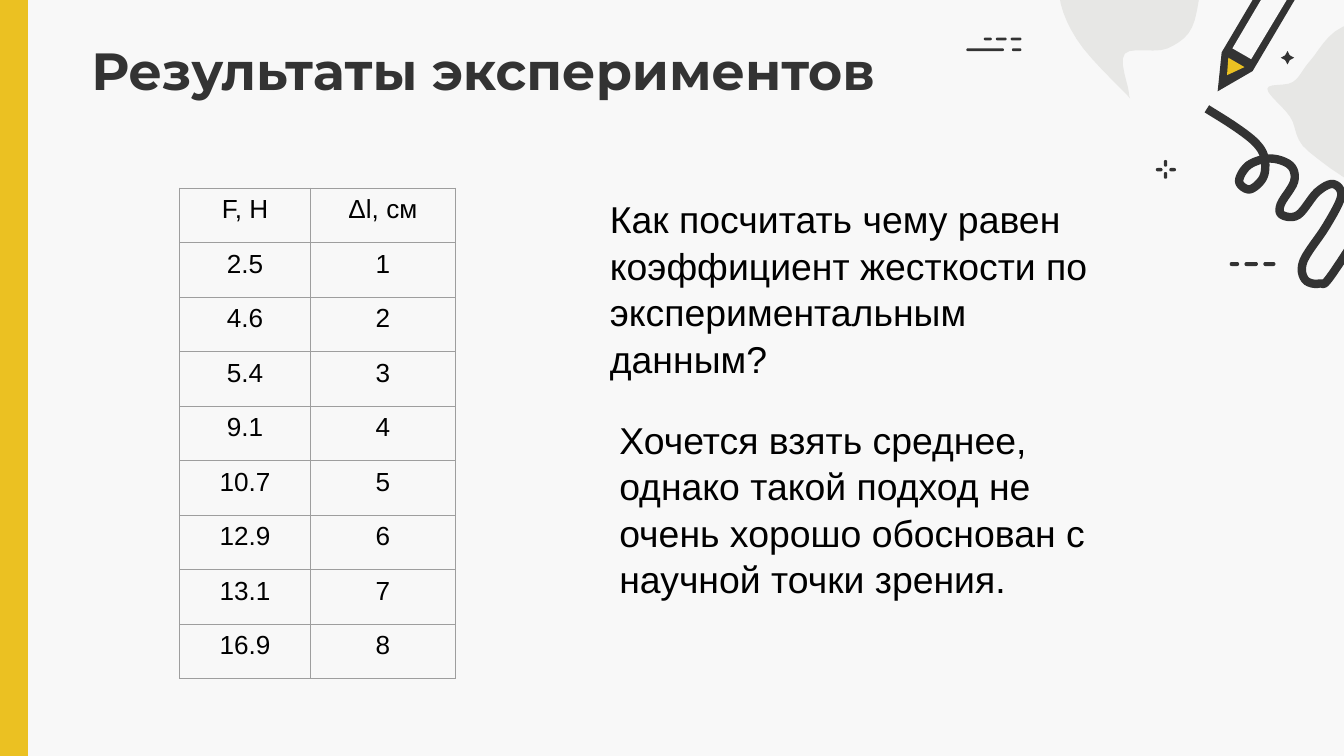
from dataclasses import dataclass

from lxml.etree import SubElement
from pptx import Presentation
from pptx.dml.color import RGBColor
from pptx.enum.shapes import MSO_SHAPE
from pptx.enum.text import MSO_ANCHOR, MSO_AUTO_SIZE, PP_ALIGN
from pptx.oxml import parse_xml
from pptx.oxml.ns import nsdecls, qn
from pptx.util import Pt

PAPER = RGBColor(0xF8, 0xF8, 0xF8)
YELLOW = RGBColor(0xEB, 0xC1, 0x22)
GREY = RGBColor(0xE7, 0xE7, 0xE5)
DARK = RGBColor(0x33, 0x33, 0x33)
BLACK = RGBColor(0, 0, 0)
BORDER = RGBColor(0x9E, 0x9E, 0x9E)
GRID = 0.72
CURVE_STEPS = 6


@dataclass
class Outline:
    color: RGBColor
    points: list


@dataclass
class DashRow:
    y: float
    h: float
    spans: list


@dataclass
class Note:
    x: float
    y: float
    text: str


BLOBS = [
    Outline(GREY, [(943, 66), (962, 61), (975, 45), (999, 20), (1050, 10),
                   (1091, 45), (1090, 105), (1030, 142), (974, 113), (960, 87)]),
    Outline(GREY, [(788, -10), (801, 29), (837, 69), (840, 69), (837, 40),
                   (869, 36), (889, 15), (889, -37), (840, -57), (804, -49)]),
]
PENCIL = [
    Outline(DARK, [(974, -18), (951, -32), (909, 39), (906, 68), (932, 53)]),
    Outline(PAPER, [(967, -16), (953, -25), (917, 36), (931, 44)]),
    Outline(YELLOW, [(914, 43), (926, 50), (913, 56)]),
]
SQUIGGLE = Outline(DARK, [
    (898, 81), (920, 95), (935, 107), (941, 118), (940, 132), (930, 141), (922, 135),
    (929, 123), (945, 118), (960, 123), (963, 135), (953, 152), (954, 160), (966, 160),
    (980, 143), (992, 137), (998, 146), (987, 168), (970, 194), (971, 208), (982, 211),
    (992, 203), (1035, 136)])
DASH_ROWS = [
    DashRow(28, 2, [(732, 6), (741, 8), (752, 8)]),
    DashRow(36, 2, [(719, 28), (753, 7)]),
    DashRow(195, 3, [(915, 7), (926, 10), (940, 9)]),
    DashRow(125, 2.5, [(860, 5), (870, 5)]),
    DashRow(119, 5, [(866, 2.5)]),
    DashRow(128, 5, [(866, 2.5)]),
]
READINGS = [("F, Н", "Δl, см"), ("2.5", "1"), ("4.6", "2"), ("5.4", "3"), ("9.1", "4"),
            ("10.7", "5"), ("12.9", "6"), ("13.1", "7"), ("16.9", "8")]
NOTES = [
    Note(319.7, 100.8, "Как посчитать чему равен коэффициент жесткости по экспериментальным данным?"),
    Note(324.7, 218.9, "Хочется взять среднее, однако такой подход не очень хорошо обоснован с научной точки зрения."),
]


def smooth(points: list, closed: bool) -> list:
    ring = [points[-1], *points, *points[:2]] if closed else [points[0], *points, points[-1]]
    curve = []
    for a, b, c, d in zip(ring, ring[1:], ring[2:], ring[3:]):
        for i in range(CURVE_STEPS):
            t = i / CURVE_STEPS
            curve.append(tuple(
                q + t * (r - p + t * (2 * p - 5 * q + 4 * r - w + t * (3 * q - p - 3 * r + w))) / 2
                for p, q, r, w in zip(a, b, c, d)))
    return curve if closed else [*curve, points[-1]]


def paint(sp, color: RGBColor) -> None:
    sp.shadow.inherit = False
    sp.fill.solid()
    sp.fill.fore_color.rgb = color
    sp.line.fill.background()


def build_outline(s, points: list, closed: bool = True):
    first, *others = [(Pt(x * GRID), Pt(y * GRID)) for x, y in points]
    builder = s.shapes.build_freeform(*first)
    builder.add_line_segments(others, close=closed)
    return builder.convert_to_shape()


def draw_squiggle(s) -> None:
    sp = build_outline(s, smooth(SQUIGGLE.points, False), False)
    sp.shadow.inherit = False
    sp.fill.background()
    sp.line.color.rgb = SQUIGGLE.color
    sp.line.width = Pt(4.5)


def draw_mark(s, kind: MSO_SHAPE, x: float, y: float, w: float, h: float, adjust: float) -> None:
    sp = s.shapes.add_shape(kind, *[Pt(v * GRID) for v in (x, y, w, h)])
    sp.adjustments[0] = adjust
    paint(sp, DARK)


def set_font(p, name: str, size: float, color: RGBColor, bold: bool = False) -> None:
    p.font.name, p.font.size, p.font.bold = name, Pt(size), bold
    p.font.color.rgb = color


def draw_title(s) -> None:
    sp = s.shapes.title
    sp.left, sp.top, sp.width, sp.height = Pt(41.8), Pt(13), Pt(534.2), Pt(43.9)
    tf = sp.text_frame
    tf.text = "Результаты экспериментов"
    tf.auto_size = MSO_AUTO_SIZE.NONE
    tf.vertical_anchor = MSO_ANCHOR.TOP
    tf.margin_left = tf.margin_right = tf.margin_top = tf.margin_bottom = Pt(7.2)
    p = tf.paragraphs[0]
    p.alignment = PP_ALIGN.LEFT
    set_font(p, "Montserrat", 28, DARK, True)


def draw_borders(cell) -> None:
    tc_pr = cell._tc.get_or_add_tcPr()
    for i, side in enumerate(("lnL", "lnR", "lnT", "lnB")):
        ln = parse_xml(f'<a:{side} {nsdecls("a")} w="{Pt(0.75)}"/>')
        fill = SubElement(ln, qn("a:solidFill"))
        SubElement(fill, qn("a:srgbClr"), val=str(BORDER))
        tc_pr.insert(i, ln)


def draw_readings(s) -> None:
    frame = s.shapes.add_table(len(READINGS), 2, Pt(96.3), Pt(100.8), Pt(147.8), Pt(262.8))
    table = frame.table
    table.first_row = table.horz_banding = False
    table.columns[0].width, table.columns[1].width = Pt(70), Pt(77.8)
    for row, values in zip(table.rows, READINGS):
        for cell, value in zip(row.cells, values):
            cell.text = value
            cell.fill.background()
            p = cell.text_frame.paragraphs[0]
            p.alignment = PP_ALIGN.CENTER
            set_font(p, "Arial", 14, BLACK)
            draw_borders(cell)


def draw_note(s, note: Note) -> None:
    tf = s.shapes.add_textbox(Pt(note.x), Pt(note.y), Pt(290.9), Pt(104.4)).text_frame
    tf.word_wrap = True
    tf.text = note.text
    p = tf.paragraphs[0]
    p.line_spacing = 1.04
    set_font(p, "Arial", 20, BLACK)


def main() -> None:
    prs = Presentation()
    prs.slide_width, prs.slide_height = Pt(720), Pt(405)
    s = prs.slides.add_slide(prs.slide_layouts[5])
    s.background.fill.solid()
    s.background.fill.fore_color.rgb = PAPER
    bar = s.shapes.add_shape(MSO_SHAPE.RECTANGLE, Pt(-0.7), 0, Pt(15.1), Pt(405))
    paint(bar, YELLOW)
    bar.line.color.rgb = YELLOW
    bar.line.width = Pt(0.75)
    for blob in BLOBS:
        paint(build_outline(s, smooth(blob.points, True)), blob.color)
    for part in PENCIL:
        paint(build_outline(s, part.points), part.color)
    draw_squiggle(s)
    for row in DASH_ROWS:
        for x, w in row.spans:
            draw_mark(s, MSO_SHAPE.ROUNDED_RECTANGLE, x, row.y, w, row.h, 0.5)
    draw_mark(s, MSO_SHAPE.STAR_4_POINT, 953, 38, 10, 10, 0.25)
    draw_title(s)
    draw_readings(s)
    for note in NOTES:
        draw_note(s, note)
    prs.save("out.pptx")


if __name__ == "__main__":
    main()
